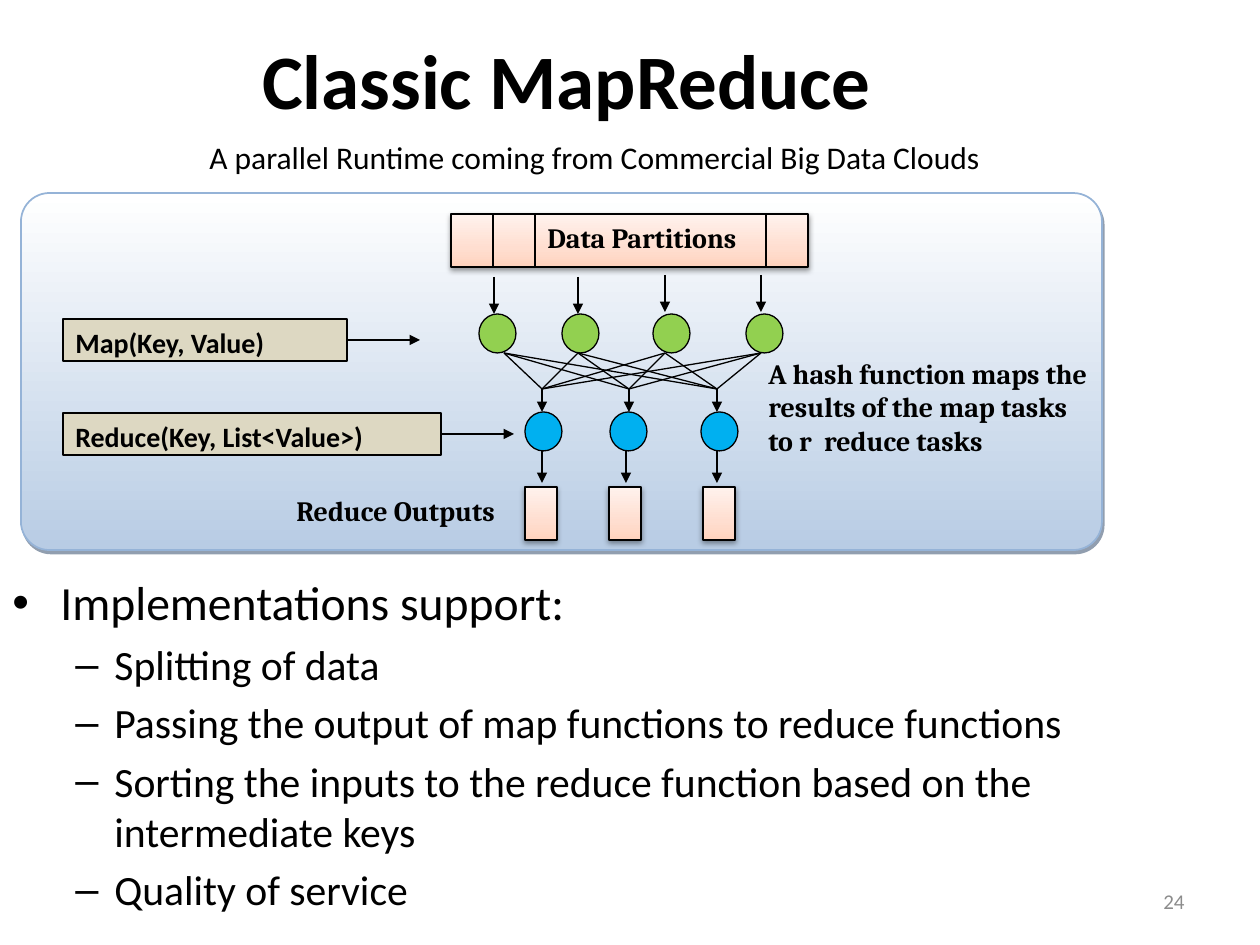
"""Build the Classic MapReduce slide."""
from dataclasses import dataclass
from itertools import product

from lxml.etree import SubElement
from pptx import Presentation
from pptx.dml.color import RGBColor
from pptx.enum.shapes import MSO_CONNECTOR, MSO_SHAPE
from pptx.enum.text import MSO_ANCHOR, PP_ALIGN
from pptx.oxml.ns import qn
from pptx.util import Emu, Pt

PX = 914400 / 126
COLORS = {
    "ink": "000000", "muted": "8C8C8C", "map": "92D050", "reduce": "00B0F0",
    "label": "DDD8C2", "panel_top": "FFFFFF", "panel_bottom": "B8CCE4",
    "panel_edge": "95B3D7", "panel_shadow": "243F60",
    "data_dark": "FFD2BD", "data_mid": "FFDED0", "data_light": "FFF2ED",
}


@dataclass(frozen=True)
class Box:
    left: int
    top: int
    width: int
    height: int

    def emu(self) -> list[Emu]:
        return [px(v) for v in (self.left, self.top, self.width, self.height)]


@dataclass(frozen=True)
class Style:
    size: float
    font: str = "Calibri"
    bold: bool = False
    color: str = "ink"
    align: PP_ALIGN = PP_ALIGN.LEFT


@dataclass(frozen=True)
class Gradient:
    stops: tuple[tuple[int, str], ...]
    angle: int


@dataclass(frozen=True)
class Shadow:
    color: str
    alpha: int
    blur: float
    distance: float
    direction: int


@dataclass(frozen=True)
class Bullet:
    mark: str
    level: int
    margin: int
    hanging: int
    size: float


CODE = Style(16, bold=True)
CAPTION = Style(16, "Cambria", True)
PANEL_FILL = Gradient(((0, "panel_top"), (100, "panel_bottom")), 270)
DATA_FILL = Gradient(((0, "data_dark"), (35, "data_mid"), (100, "data_light")), 90)
PANEL_SHADOW = Shadow("panel_shadow", 50, 0, 2.2, 63)
DATA_SHADOW = Shadow("ink", 38, 3.1, 1.6, 90)
TOPIC = Bullet("•", 0, 48, 48, 27.2)
DETAIL = Bullet("–", 1, 102, 39, 23.8)


def px(value: int) -> Emu:
    return Emu(round(value * PX))


def rgb(name: str) -> RGBColor:
    return RGBColor.from_string(COLORS[name])


def add_run(paragraph, text: str, style: Style) -> None:
    paragraph.alignment = style.align
    run = paragraph.add_run()
    run.text = text
    run.font.size = Pt(style.size)
    run.font.name = style.font
    run.font.bold = style.bold
    run.font.color.rgb = rgb(style.color)


def add_label(slide, box: Box, text: str, style: Style,
              wrap: bool = True, anchor: MSO_ANCHOR = MSO_ANCHOR.TOP) -> None:
    frame = slide.shapes.add_textbox(*box.emu()).text_frame
    frame.word_wrap = wrap
    frame.vertical_anchor = anchor
    add_run(frame.paragraphs[0], text, style)


def fill_gradient(shape, gradient: Gradient) -> None:
    shape.fill.gradient()
    shape.fill.gradient_angle = gradient.angle
    stop_list = shape._element.spPr.find(".//" + qn("a:gsLst"))
    stop_list.clear()
    for position, color in gradient.stops:
        stop = SubElement(stop_list, qn("a:gs"), pos=str(position * 1000))
        SubElement(stop, qn("a:srgbClr"), val=COLORS[color])


def cast_shadow(shape, shadow: Shadow) -> None:
    effects = shape._element.spPr.find(qn("a:effectLst"))
    outer = SubElement(effects, qn("a:outerShdw"), blurRad=str(Pt(shadow.blur)),
                       dist=str(Pt(shadow.distance)),
                       dir=str(shadow.direction * 60000), rotWithShape="0")
    color = SubElement(outer, qn("a:srgbClr"), val=COLORS[shadow.color])
    SubElement(color, qn("a:alpha"), val=str(shadow.alpha * 1000))


def add_figure(slide, kind: MSO_SHAPE, box: Box, fill: str | Gradient,
               shadow: Shadow | None = None, edge: str = "ink", weight: float = 0.75):
    figure = slide.shapes.add_shape(kind, *box.emu())
    figure.shadow.inherit = False
    if isinstance(fill, Gradient):
        fill_gradient(figure, fill)
    else:
        figure.fill.solid()
        figure.fill.fore_color.rgb = rgb(fill)
    figure.line.color.rgb = rgb(edge)
    figure.line.width = Pt(weight)
    if shadow:
        cast_shadow(figure, shadow)
    return figure


def add_line(slide, start: tuple[int, int], end: tuple[int, int], arrow: bool = False) -> None:
    line = slide.shapes.add_connector(
        MSO_CONNECTOR.STRAIGHT, *(px(v) for v in (*start, *end)))
    line.line.color.rgb = rgb("ink")
    line.line.width = Pt(0.75)
    if arrow:
        SubElement(line.line._get_or_add_ln(), qn("a:tailEnd"), type="triangle")
    SubElement(line._element.spPr, qn("a:effectLst"))


def add_signature(slide, box: Box, text: str) -> None:
    frame = add_figure(slide, MSO_SHAPE.RECTANGLE, box, "label").text_frame
    frame.word_wrap = True
    frame.vertical_anchor = MSO_ANCHOR.TOP
    add_run(frame.paragraphs[0], text, CODE)
    right, middle = box.left + box.width, box.top + box.height // 2
    add_line(slide, (right, middle), (right + 73, middle), arrow=True)


def add_bullets(slide, box: Box, items: list[tuple[Bullet, str]]) -> None:
    frame = slide.shapes.add_textbox(*box.emu()).text_frame
    frame.word_wrap = True
    for index, (bullet, text) in enumerate(items):
        paragraph = frame.add_paragraph() if index else frame.paragraphs[0]
        paragraph.level = bullet.level
        if index:
            paragraph.space_before = Pt(round(bullet.size * 0.2, 1))
        properties = paragraph._p.get_or_add_pPr()
        properties.set("marL", str(px(bullet.margin)))
        properties.set("indent", str(px(-bullet.hanging)))
        SubElement(properties, qn("a:buFont"), typeface="Arial")
        SubElement(properties, qn("a:buChar"), char=bullet.mark)
        add_run(paragraph, text, Style(bullet.size))


def draw_flow(slide) -> None:
    panel = add_figure(slide, MSO_SHAPE.ROUNDED_RECTANGLE, Box(21, 193, 1081, 357),
                       PANEL_FILL, PANEL_SHADOW, "panel_edge", 1)
    panel.adjustments[0] = 0.08
    add_signature(slide, Box(63, 319, 284, 42), "Map(Key, Value)")
    add_signature(slide, Box(63, 413, 378, 42), "Reduce(Key, List<Value>)")

    for left, arrow_x, top in ((479, 494, 277), (562, 578, 277),
                               (653, 665, 275), (746, 761, 275)):
        add_figure(slide, MSO_SHAPE.OVAL, Box(left, 314, 37, 39), "map")
        add_line(slide, (arrow_x, top), (arrow_x, top + 37), arrow=True)
    for left, hub, exit_x, output in ((525, 542, 542, 525), (610, 629, 626, 609),
                                      (701, 717, 717, 703)):
        add_figure(slide, MSO_SHAPE.OVAL, Box(left, 412, 37, 39), "reduce")
        add_line(slide, (hub, 389), (hub, 412), arrow=True)
        add_line(slide, (exit_x, 450), (exit_x, 483), arrow=True)
        add_figure(slide, MSO_SHAPE.RECTANGLE, Box(output, 487, 32, 53),
                   DATA_FILL, DATA_SHADOW)
    for hub, source in product((542, 629, 717), (504, 578, 665, 761)):
        add_line(slide, (source, 353), (hub, 389))

    add_figure(slide, MSO_SHAPE.RECTANGLE, Box(451, 214, 357, 53), DATA_FILL, DATA_SHADOW)
    for divider in (493, 535, 766):
        add_line(slide, (divider, 214), (divider, 266))
    add_label(slide, Box(535, 214, 221, 53), "Data Partitions", CAPTION)
    add_label(slide, Box(284, 487, 231, 53), "Reduce Outputs", CAPTION)
    add_label(slide, Box(756, 350, 347, 147),
              "A hash function maps the results of the map tasks to r  reduce tasks", CAPTION)


def main() -> None:
    deck = Presentation()
    deck.slide_width, deck.slide_height = px(1260), px(945)
    slide = deck.slides.add_slide(deck.slide_layouts[5])
    title = slide.shapes.title
    title.left, title.top, title.width, title.height = Box(0, 0, 1134, 158).emu()
    title.text_frame.vertical_anchor = MSO_ANCHOR.MIDDLE
    add_run(title.text_frame.paragraphs[0], "Classic MapReduce",
            Style(44, bold=True, align=PP_ALIGN.CENTER))
    add_label(slide, Box(197, 132, 805, 50),
              "A parallel Runtime coming from Commercial Big Data Clouds", Style(18), wrap=False)
    draw_flow(slide)
    add_bullets(slide, Box(0, 567, 1113, 336), [
        (TOPIC, "Implementations support:"),
        (DETAIL, "Splitting of data"),
        (DETAIL, "Passing the output of map functions to reduce functions"),
        (DETAIL, "Sorting the inputs to the reduce function based on the intermediate keys"),
        (DETAIL, "Quality of service"),
    ])
    add_label(slide, Box(903, 876, 294, 50), "24",
              Style(12, color="muted", align=PP_ALIGN.RIGHT), anchor=MSO_ANCHOR.MIDDLE)
    deck.save("out.pptx")


if __name__ == "__main__":
    main()
